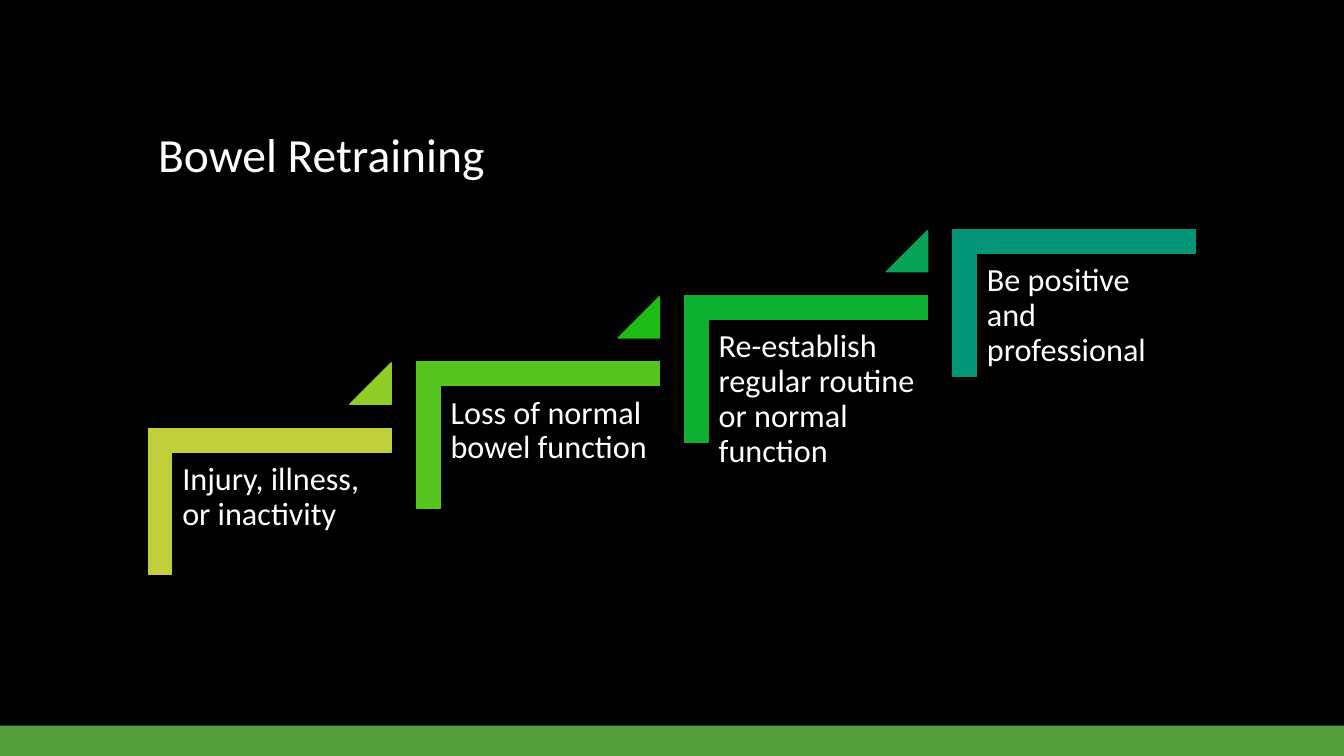
from dataclasses import dataclass

from pptx import Presentation
from pptx import util as u
from pptx.dml.color import RGBColor
from pptx.enum import shapes, text


@dataclass(frozen=True)
class Theme:
    font: str = "Calibri"
    title_size: int = 34
    step_size: int = 23
    background: str = "000000"
    ink: str = "FFFFFF"
    footer: str = "549E39"
    corners: tuple = ("C0CF3A", "57C51F", "0EB032", "029676")
    triangles: tuple = ("8FCD29", "1FBB16", "07A356")


THEME = Theme()
STEPS = (
    "Injury, illness, or inactivity",
    "Loss of normal bowel function",
    "Re-establish regular routine or normal function",
    "Be positive and professional",
)
STEP_PITCH, STEP_RISE = 2.66, 0.657
STEP_WIDTH, STEP_HEIGHT = 2.41, 1.45
ARM_RATIO = 0.161  # arm thickness as a share of the corner's short side
TRIANGLE_SIDE = 0.41


def add_shape(page, kind, box, color, outlined=True):
    shape = page.shapes.add_shape(kind, *(u.Inches(length) for length in box))
    shape.shadow.inherit = False
    shape.fill.solid()
    shape.fill.fore_color.rgb = RGBColor.from_string(color)
    if outlined:
        shape.line.color.rgb = RGBColor.from_string(color)
        shape.line.width = u.Pt(1)
    else:
        shape.line.fill.background()
    return shape


def add_text(page, words, box, size, frame_format):
    frame = page.shapes.add_textbox(*(u.Inches(length) for length in box)).text_frame
    for name, value in {"word_wrap": True, **frame_format}.items():
        setattr(frame, name, value)
    para = frame.paragraphs[0]
    para.line_spacing = 0.9
    span = para.add_run()
    span.text = words
    for name, value in {"name": THEME.font, "size": u.Pt(size)}.items():
        setattr(span.font, name, value)
    span.font.color.rgb = RGBColor.from_string(THEME.ink)


def add_step(page, box, words, color):
    """Draw a corner bracket that fills the box, with its text inside the arms."""
    left, top, width, height = box
    # The preset is turned a quarter, so its unrotated sides are swapped about the centre.
    shift = (width - height) / 2
    corner = add_shape(page, shapes.MSO_SHAPE.CORNER,
                       (left + shift, top - shift, height, width), color)
    corner.rotation = 90
    for index in range(2):
        corner.adjustments[index] = ARM_RATIO
    arm = 0.24
    margins = {f"margin_{side}": u.Inches(0.1) for side in ("left", "top", "right", "bottom")}
    add_text(page, words, (left + arm, top + arm, width - arm, 1.9), THEME.step_size, margins)


def add_triangle(page, box, color):
    """Draw the rising marker above the right end of a step's box."""
    left, top, width, _ = box
    triangle = add_shape(page, shapes.MSO_SHAPE.ISOSCELES_TRIANGLE,
                         (left + width - TRIANGLE_SIDE, top - 0.65,
                          TRIANGLE_SIDE, TRIANGLE_SIDE), color)
    triangle.adjustments[0] = 1


def add_staircase(page, left, top):
    """Place the steps from the first one's corner, each higher than the last."""
    for index, (words, color) in enumerate(zip(STEPS, THEME.corners)):
        box = (left + index * STEP_PITCH, top - index * STEP_RISE, STEP_WIDTH, STEP_HEIGHT)
        add_step(page, box, words, color)
        if index < len(THEME.triangles):
            add_triangle(page, box, THEME.triangles[index])


def build_page(deck):
    page = deck.slides.add_slide(deck.slide_layouts[6])
    page.background.fill.solid()
    page.background.fill.fore_color.rgb = RGBColor.from_string(THEME.background)
    add_shape(page, shapes.MSO_SHAPE.RECTANGLE, (0, 7.2, 13.33, 0.3), THEME.footer, outlined=False)
    add_text(page, "Bowel Retraining", (1.47, 0.51, 10.4, 1.35), THEME.title_size,
             {"vertical_anchor": text.MSO_ANCHOR.BOTTOM})
    add_staircase(page, 1.47, 4.25)


def main():
    deck = Presentation()
    deck.slide_width, deck.slide_height = u.Inches(13.33), u.Inches(7.5)
    build_page(deck)
    deck.save("out.pptx")


if __name__ == "__main__":
    main()
